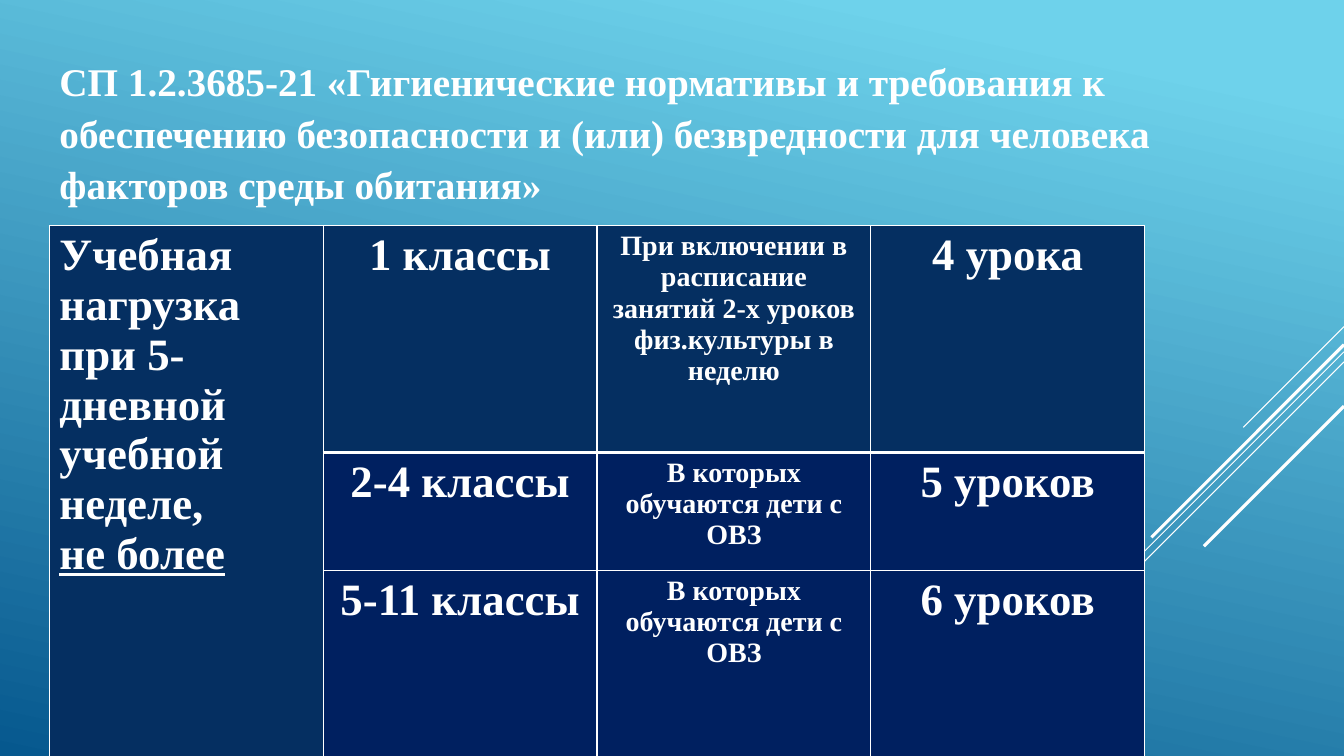
import dataclasses

import lxml.etree
import pptx
import pptx.dml.color
import pptx.enum.shapes
import pptx.enum.text
import pptx.oxml.ns
import pptx.util

ALIGN = pptx.enum.text.PP_ALIGN
qn = pptx.oxml.ns.qn


@dataclasses.dataclass(frozen=True)
class Theme:
    """Colours, font and type sizes of the slide."""
    sky: str = "6ED2EB"
    deep: str = "06588E"
    navy: str = "052F61"
    indigo: str = "002060"
    white: str = "FFFFFF"
    font: str = "Times New Roman"
    title: int = 28
    large: int = 32
    small: int = 20


def rgb(colour):
    """Turn a hex string into a colour."""
    return pptx.dml.color.RGBColor.from_string(colour)


class Deck:
    """Draw elements on a grid of 40 columns by 30 rows."""

    def __init__(self, theme):
        """Open a widescreen slide with a title."""
        self.theme = theme
        self.prs = pptx.Presentation()
        self.prs.slide_width = pptx.util.Inches(13.33)
        self.prs.slide_height = pptx.util.Inches(7.5)
        self.slide = self.prs.slides.add_slide(self.prs.slide_layouts[5])

    def x(self, columns):
        """Convert grid columns to a length."""
        return round(self.prs.slide_width * columns / 40)

    def y(self, rows):
        """Convert grid rows to a length."""
        return round(self.prs.slide_height * rows / 30)

    def background(self, angle):
        """Fill the slide with the sky gradient."""
        fill = self.slide.background.fill
        fill.gradient()
        fill.gradient_angle = angle
        colours = (self.theme.sky, self.theme.deep)
        for stop, colour, position in zip(fill.gradient_stops, colours, (0.1, 1)):
            stop.color.rgb = rgb(colour)
            stop.position = position

    def ray(self, top, drop, weight):
        """Draw a 45-degree line down from the right edge."""
        ray = self.slide.shapes.add_connector(
            pptx.enum.shapes.MSO_CONNECTOR.STRAIGHT,
            self.x(40), self.y(top), self.x(40 - drop * 0.75), self.y(top + drop))
        ray.line.color.rgb = rgb(self.theme.white)
        ray.line.width = pptx.util.Pt(weight)
        lxml.etree.SubElement(ray.element.spPr, qn("a:effectLst"))

    def add_text(self, paragraph, text, size, align, underline=False):
        """Add one bold white run to a paragraph."""
        paragraph.alignment = align
        run = paragraph.add_run()
        run.text = text
        run.font.name = self.theme.font
        run.font.size = pptx.util.Pt(size)
        run.font.bold = True
        run.font.underline = underline
        run.font.color.rgb = rgb(self.theme.white)

    def title(self, text, left, top, width, height):
        """Place and fill the title placeholder."""
        heading = self.slide.shapes.title
        heading.left, heading.top = self.x(left), self.y(top)
        heading.width, heading.height = self.x(width), self.y(height)
        frame = heading.text_frame
        frame.word_wrap = True
        frame.auto_size = pptx.enum.text.MSO_AUTO_SIZE.SHAPE_TO_FIT_TEXT
        frame.vertical_anchor = pptx.enum.text.MSO_ANCHOR.TOP
        frame.paragraphs[0].line_spacing = 1.09
        self.add_text(frame.paragraphs[0], text, self.theme.title, ALIGN.LEFT)

    def style_cell(self, cell, colour, top, bottom):
        """Set the borders and fill of a cell."""
        properties = cell._tc.get_or_add_tcPr()
        for side, weight in zip("LRTB", (1, 1, top, bottom)):
            border = lxml.etree.SubElement(
                properties, qn(f"a:ln{side}"), w=str(pptx.util.Pt(weight)))
            solid = lxml.etree.SubElement(border, qn("a:solidFill"))
            lxml.etree.SubElement(solid, qn("a:srgbClr"), val=self.theme.white)
        cell.fill.solid()
        cell.fill.fore_color.rgb = rgb(colour)

    def load_table(self, heading, loads, left, top, column, heights):
        """Build the table with a heading merged down its first column."""
        count = len(loads[0]) + 1
        table = self.slide.shapes.add_table(
            len(loads), count, self.x(left), self.y(top),
            self.x(column * count), self.y(sum(heights))).table
        for grid_column in table.columns:
            grid_column.width = self.x(column)
        sizes = (self.theme.large, self.theme.small, self.theme.large)
        for r, (load, height) in enumerate(zip(loads, heights)):
            table.rows[r].height = self.y(height)
            self.style_cell(table.cell(r, 0), self.theme.navy, 1, 1)
            colour = self.theme.indigo if r else self.theme.navy
            for c, (text, size) in enumerate(zip(load, sizes), 1):
                cell = table.cell(r, c)
                self.style_cell(cell, colour, 3 if r == 1 else 1, 1 if r else 3)
                self.add_text(cell.text_frame.paragraphs[0], text, size, ALIGN.CENTER)
        corner = table.cell(0, 0)
        corner.merge(table.cell(len(loads) - 1, 0))
        rule, limit = heading
        frame = corner.text_frame
        self.add_text(frame.paragraphs[0], rule, self.theme.large, ALIGN.LEFT)
        self.add_text(frame.add_paragraph(), limit, self.theme.large, ALIGN.LEFT, True)


RAYS = [(12.96, 4, 0.75), (13.96, 13.04, 0.75), (14.36, 8.28, 0.75),
        (13.68, 7.64, 2.25), (16.12, 5.56, 2.25)]
HEADING = ("Учебная нагрузка при 5- дневной учебной неделе,", "не более")
SPECIAL_NEEDS = "В которых обучаются дети с ОВЗ"
LOADS = [
    ("1 классы",
     "При включении в расписание занятий 2-х уроков физ.культуры в неделю",
     "4 урока"),
    ("2-4 классы", SPECIAL_NEEDS, "5 уроков"),
    ("5-11 классы", SPECIAL_NEEDS, "6 уроков"),
]


def main():
    """Build and save the slide."""
    deck = Deck(Theme())
    deck.background(258)
    for ray in RAYS:
        deck.ray(*ray)
    deck.title(
        "СП 1.2.3685-21 «Гигиенические нормативы и требования к обеспечению "
        "безопасности и (или) безвредности для человека факторов среды обитания»",
        1.47, 1.92, 37.2, 6.04)
    deck.load_table(HEADING, LOADS, 1.47, 8.96, 8.15, (9, 4.68, 7.36))
    deck.prs.save("out.pptx")


if __name__ == "__main__":
    main()
